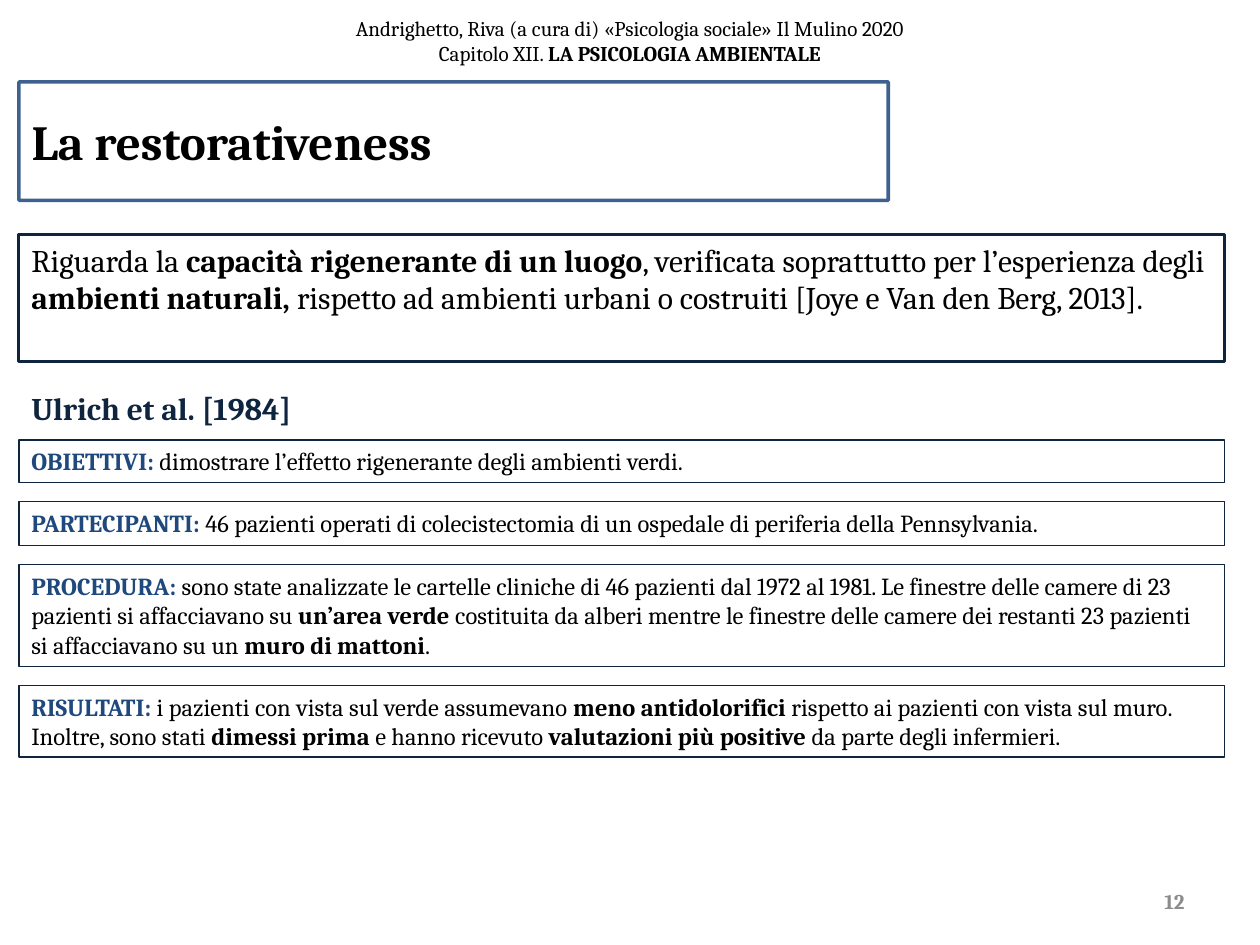
from dataclasses import dataclass

from lxml import etree
from pptx import Presentation
from pptx.dml.color import RGBColor
from pptx.enum.shapes import MSO_SHAPE
from pptx.enum.text import MSO_ANCHOR, MSO_AUTO_SIZE, PP_ALIGN
from pptx.oxml.ns import qn
from pptx.util import Inches, Pt

RECT = MSO_SHAPE.RECTANGLE
TOP, MIDDLE = MSO_ANCHOR.TOP, MSO_ANCHOR.MIDDLE
LEFT, CENTER, RIGHT = PP_ALIGN.LEFT, PP_ALIGN.CENTER, PP_ALIGN.RIGHT
FIXED = MSO_AUTO_SIZE.NONE


@dataclass(frozen=True)
class Theme:
    font: str = "Cambria"
    ink: str = "000000"
    navy: str = "0F243E"
    blue: str = "1F497D"
    grey: str = "8C8C8C"
    paper: str = "FFFFFF"
    title: int = 28
    lead: int = 18
    body: int = 14
    small: int = 12


class Deck:
    """Style and current slide; lengths are in grid units of a tenth of an inch."""

    COLS, ROWS = 100, 75

    def __init__(self, theme):
        self.theme = theme
        self.prs = Presentation()
        self.prs.slide_width, self.prs.slide_height = Inches(10), Inches(7.5)
        self.s = self.prs.slides.add_slide(self.prs.slide_layouts[5])

    def box(self, x, y, w, h):
        col = self.prs.slide_width / self.COLS
        row = self.prs.slide_height / self.ROWS
        return round(x * col), round(y * row), round(w * col), round(h * row)

    def set_text(self, sp, text, size, color=None, label="", align=LEFT, anchor=TOP):
        """Fill a shape with text; **marks** set bold, newlines break lines."""
        tf = sp.text_frame
        tf.word_wrap, tf.auto_size, tf.vertical_anchor = True, FIXED, anchor
        p = tf.paragraphs[0]
        p.alignment = align
        p.font.name, p.font.size = self.theme.font, Pt(size)
        p.font.color.rgb = RGBColor.from_string(color or self.theme.ink)
        if label:
            r = p.add_run()
            r.text = label + " "
            r.font.bold = True
            r.font.color.rgb = RGBColor.from_string(self.theme.blue)
        for i, part in enumerate(text.split("**")):
            for j, line in enumerate(part.split("\n")):
                if j:
                    p.add_line_break()
                if line:
                    r = p.add_run()
                    r.text, r.font.bold = line, i % 2 == 1

    def outline(self, sp, color, width):
        sp.line.color.rgb = RGBColor.from_string(color)
        sp.line.width = Pt(width)

    def title(self, at, text):
        sp = self.s.shapes.title
        sp.left, sp.top, sp.width, sp.height = self.box(*at)
        self.outline(sp, self.theme.blue, 2)
        clr = next(sp.element.spPr.iter(qn("a:srgbClr")))
        etree.SubElement(clr, qn("a:alpha")).set("val", "86000")
        self.set_text(sp, f"**{text}**", self.theme.title, anchor=MIDDLE)

    def text(self, at, text, size, **style):
        self.set_text(self.s.shapes.add_textbox(*self.box(*at)), text, size, **style)

    def panel(self, at, text, size, width=1, fill=None, **style):
        sp = self.s.shapes.add_shape(RECT, *self.box(*at))
        sp.shadow.inherit = False
        if fill:
            sp.fill.solid()
            sp.fill.fore_color.rgb = RGBColor.from_string(fill)
        else:
            sp.fill.background()
        self.outline(sp, self.theme.navy, width)
        self.set_text(sp, text, size, **style)


MARGIN, WIDTH, GAP = 1.5, 95.7, 1.5

# Study sections: label, height in rows, text
STUDY = [
    ("OBIETTIVI:", 3.4, "dimostrare l’effetto rigenerante degli ambienti verdi."),
    ("PARTECIPANTI:", 3.5,
     "46 pazienti operati di colecistectomia di un ospedale di periferia "
     "della Pennsylvania."),
    ("PROCEDURA:", 8.1,
     "sono state analizzate le cartelle cliniche di 46 pazienti dal 1972 al 1981. "
     "Le finestre delle camere di 23 pazienti si affacciavano su **un’area verde "
     "**costituita da alberi mentre le finestre delle camere dei restanti 23 "
     "pazienti si affacciavano su un **muro di mattoni**."),
    ("RISULTATI:", 5.7,
     "i pazienti con vista sul verde assumevano **meno antidolorifici **rispetto "
     "ai pazienti con vista sul muro. Inoltre, sono stati **dimessi prima **e "
     "hanno ricevuto **valutazioni più positive **da parte degli infermieri."),
]


def main():
    theme = Theme()
    deck = Deck(theme)

    # Running header and page number
    deck.text((0, -1.1, 100, 8.7),
              "Andrighetto, Riva (a cura di) «Psicologia sociale» Il Mulino 2020\n"
              "Capitolo XII. **LA PSICOLOGIA AMBIENTALE**",
              theme.small, align=CENTER, anchor=MIDDLE)
    deck.text((71.7, 69.5, 23.3, 4), "**12**", theme.small,
              color=theme.grey, align=RIGHT, anchor=MIDDLE)

    # Title and definition
    deck.title((MARGIN, 6.5, 69, 9.4), "La restorativeness")
    deck.panel((MARGIN, 18.6, WIDTH, 10.1),
               "Riguarda la **capacità rigenerante di un luogo**, verificata "
               "soprattutto per l’esperienza degli **ambienti naturali, **rispetto "
               "ad ambienti urbani o costruiti [Joye e Van den Berg, 2013].",
               theme.lead, width=1.75, fill=theme.paper)

    # Study, one panel per section
    deck.text((MARGIN, 30.4, WIDTH, 4.1), "**Ulrich et al. [1984]**",
              theme.lead, color=theme.navy)
    y = 34.9
    for label, height, text in STUDY:
        deck.panel((MARGIN, y, WIDTH, height), text, theme.body, label=label)
        y += height + GAP

    deck.prs.save("out.pptx")


if __name__ == "__main__":
    main()
